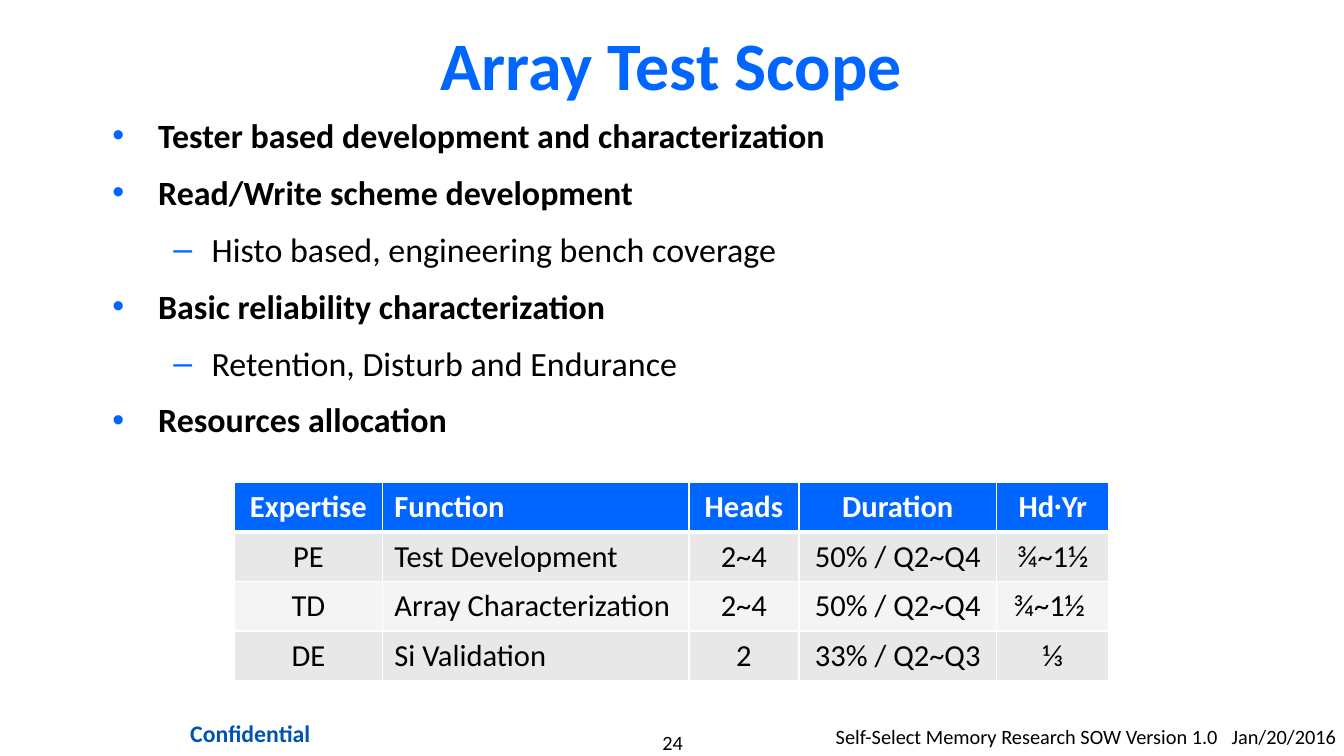
from dataclasses import dataclass

from lxml.etree import SubElement
from pptx import Presentation
from pptx.dml.color import RGBColor
from pptx.enum.text import MSO_ANCHOR as Anchor
from pptx.enum.text import MSO_AUTO_SIZE as AutoSize
from pptx.enum.text import PP_ALIGN as Align
from pptx.oxml.ns import qn
from pptx.util import Pt

BLUE = "0066FF"
BLACK = "000000"
WHITE = "FFFFFF"


@dataclass
class Label:
    text: str
    left: float
    top: float
    width: float
    height: float
    size: float = 12
    color: str = BLACK
    bold: bool = False
    align: Align = Align.CENTER
    margin_x: float = 0
    margin_y: float = 0
    tab: float = 0


@dataclass
class Bullet:
    text: str
    level: int = 0


@dataclass
class Column:
    width: float
    align: Align = Align.CENTER


LABELS = [
    Label("Confidential", 91.4, 420.5, 112.3, 24.5, 14, "0054B0", True,
          margin_x=7.2, margin_y=3.6),
    Label("Self-Select Memory Research SOW Version 1.0\tJan/20/2016",
          492.5, 423.4, 299.5, 21.6, align=Align.LEFT, margin_y=3.6, tab=233.3),
    Label("24", 326.9, 430.6, 139, 14.4),
]
BULLETS = [
    Bullet("Tester based development and characterization"),
    Bullet("Read/Write scheme development"),
    Bullet("Histo based, engineering bench coverage", 1),
    Bullet("Basic reliability characterization"),
    Bullet("Retention, Disturb and Endurance", 1),
    Bullet("Resources allocation"),
]
BULLET_STYLES = [("•", 27, -27), ("–", 58.5, -22.5)]
COLUMNS = [Column(87.1), Column(180.7, Align.LEFT), Column(64.8),
           Column(116.6), Column(66.2)]
ROWS = [
    ["Expertise", "Function", "Heads", "Duration", "Hd∙Yr"],
    ["PE", "Test Development", "2~4", "50% / Q2~Q4", "¾~1½"],
    ["TD", "Array Characterization", "2~4", "50% / Q2~Q4", "¾~1½ "],
    ["DE", "Si Validation", "2", "33% / Q2~Q3", "⅓"],
]
ROW_HEIGHT = 29.2
ROW_FILLS = [BLUE, "E8E8E8", "F4F4F4", "E8E8E8"]


def rgb(color: str) -> RGBColor:
    return RGBColor.from_string(color)


def place(shape, left: float, top: float, width: float, height: float) -> None:
    shape.left, shape.top = Pt(left), Pt(top)
    shape.width, shape.height = Pt(width), Pt(height)


def style(paragraph, size: float, color: str, bold: bool) -> None:
    font = paragraph.font
    font.name, font.size, font.bold = "Calibri", Pt(size), bold
    font.color.rgb = rgb(color)


def draw_label(slide, label: Label) -> None:
    box = slide.shapes.add_textbox(Pt(label.left), Pt(label.top),
                                   Pt(label.width), Pt(label.height))
    frame = box.text_frame
    frame.word_wrap = True
    frame.margin_left = frame.margin_right = Pt(label.margin_x)
    frame.margin_top = frame.margin_bottom = Pt(label.margin_y)
    paragraph = frame.paragraphs[0]
    paragraph.text = label.text
    paragraph.alignment = label.align
    if label.tab:
        properties = paragraph._p.get_or_add_pPr()
        tabs = SubElement(properties, qn("a:tabLst"))
        SubElement(tabs, qn("a:tab"), pos=str(Pt(label.tab)), algn="l")
    style(paragraph, label.size, label.color, label.bold)


def draw_title(title) -> None:
    place(title, 59, 10.1, 673.2, 54.7)
    frame = title.text_frame
    frame.text = "Array Test Scope"
    frame.auto_size = AutoSize.NONE
    frame.vertical_anchor = Anchor.MIDDLE
    frame.paragraphs[0].alignment = Align.CENTER
    style(frame.paragraphs[0], 40, BLUE, True)


def draw_bullets(body, bullets: list[Bullet]) -> None:
    place(body, 59, 64.1, 673.2, 325.4)
    frame = body.text_frame
    frame.auto_size = AutoSize.NONE
    for index, bullet in enumerate(bullets):
        paragraph = frame.add_paragraph() if index else frame.paragraphs[0]
        paragraph.text = bullet.text
        paragraph.level = bullet.level
        paragraph.space_before = Pt(9.5 if index else 0)
        character, margin, indent = BULLET_STYLES[bullet.level]
        properties = paragraph._p.get_or_add_pPr()
        properties.set("marL", str(Pt(margin)))
        properties.set("indent", str(Pt(indent)))
        bullet_color = SubElement(properties, qn("a:buClr"))
        SubElement(bullet_color, qn("a:srgbClr"), val=BLUE)
        SubElement(properties, qn("a:buChar"), char=character)
        style(paragraph, 20, BLACK, bullet.level == 0)


def set_borders(cell, top: float, bottom: float) -> None:
    properties = cell._tc.get_or_add_tcPr()
    for side, width in (("L", 1), ("R", 1), ("T", top), ("B", bottom)):
        line = SubElement(properties, qn(f"a:ln{side}"), w=str(Pt(width)))
        fill = SubElement(line, qn("a:solidFill"))
        SubElement(fill, qn("a:srgbClr"), val=WHITE)


def fill_cell(cell, text: str, row: int, align: Align) -> None:
    set_borders(cell, 3 if row == 1 else 1, 3 if row == 0 else 1)
    cell.fill.solid()
    cell.fill.fore_color.rgb = rgb(ROW_FILLS[row])
    paragraph = cell.text_frame.paragraphs[0]
    paragraph.alignment = align
    style(paragraph, 18, BLACK if row else WHITE, row == 0)
    before, dot, after = text.partition("∙")
    for part in filter(None, (before, dot, after)):
        run = paragraph.add_run()
        run.text = part
        if part == "∙":
            run.font.name = "Times New Roman"


def draw_table(slide, columns: list[Column], rows: list[list[str]]) -> None:
    frame = slide.shapes.add_table(
        len(rows), len(columns), Pt(138.2), Pt(284.4),
        Pt(sum(column.width for column in columns)), Pt(ROW_HEIGHT * len(rows)))
    table = frame.table
    for index, column in enumerate(columns):
        table.columns[index].width = Pt(column.width)
    for row, texts in enumerate(rows):
        table.rows[row].height = Pt(ROW_HEIGHT)
        for index, text in enumerate(texts):
            fill_cell(table.cell(row, index), text, row, columns[index].align)


def main() -> None:
    presentation = Presentation()
    presentation.slide_width, presentation.slide_height = Pt(792), Pt(445.7)
    slide = presentation.slides.add_slide(presentation.slide_layouts[1])
    draw_title(slide.shapes.title)
    draw_bullets(slide.placeholders[1], BULLETS)
    draw_table(slide, COLUMNS, ROWS)
    for label in LABELS:
        draw_label(slide, label)
    presentation.save("out.pptx")


if __name__ == "__main__":
    main()
